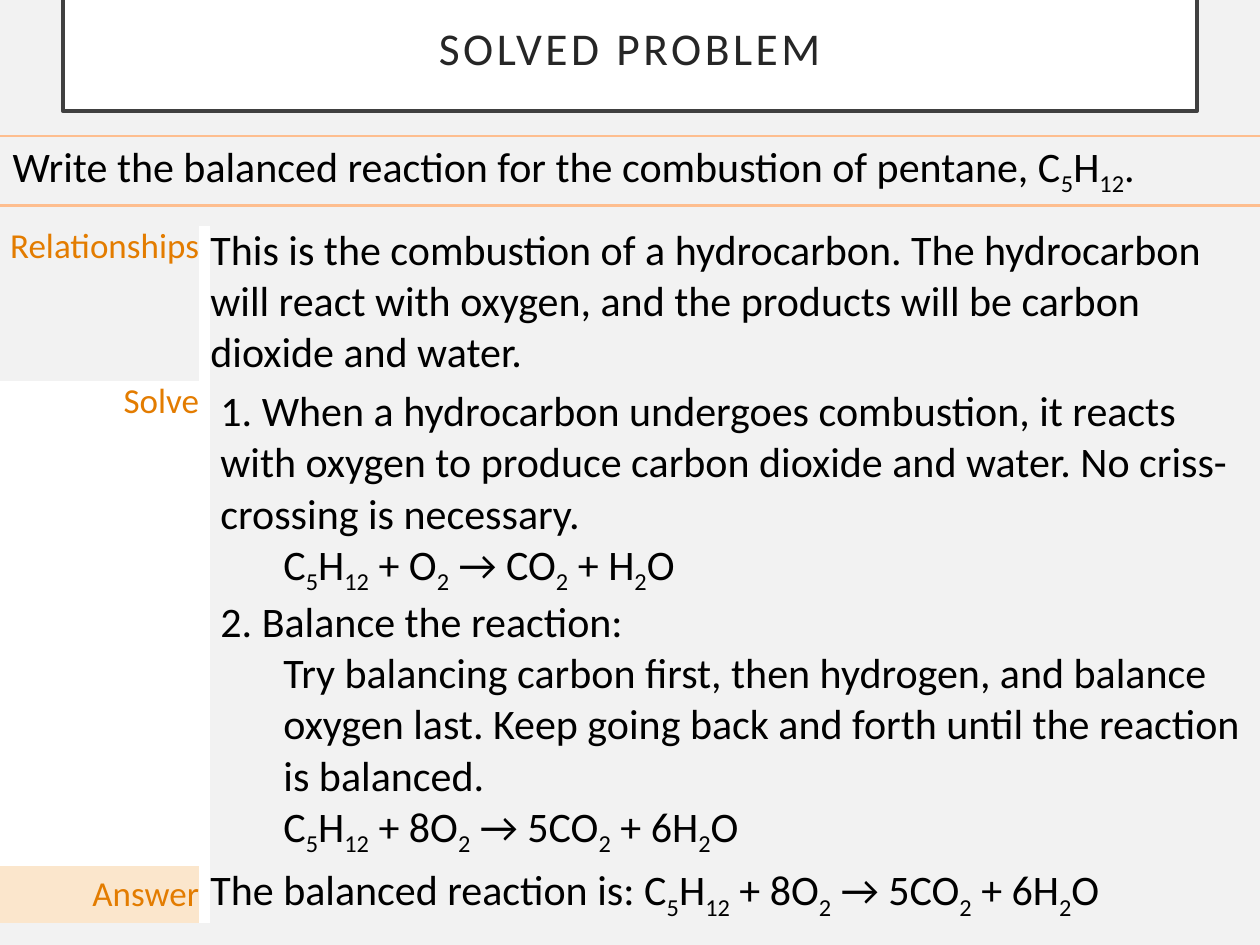
from lxml.etree import SubElement
from pptx import Presentation
from pptx.dml.color import RGBColor
from pptx.enum.shapes import MSO_SHAPE as Shape
from pptx.enum.text import MSO_ANCHOR as Anchor, PP_ALIGN as Align
from pptx.oxml.ns import qn
from pptx.util import Inches, Pt

COLORS = {
    "page": "F2F2F2", "white": "FFFFFF", "frame": "404040", "title": "262626",
    "text": "000000", "label": "E37C00", "rule": "FEBE8F", "answer": "FBE6CC",
}
PENTANE = "C~5~H~12~"
UNBALANCED = f"{PENTANE} + O~2~ → CO~2~ + H~2~O"
BALANCED = f"{PENTANE} + 8O~2~ → 5CO~2~ + 6H~2~O"
NO_STYLE = "{2D5ABB26-0587-4C30-8999-92F81FD0307C}"
FLUSH = (0, 0, 0, 0)


class Sheet:
    """A slide on a grid of 100 columns by 75 rows, with its text style."""

    font = "Calibri"
    body_size, label_size, title_size = 24, 20, 26

    def __init__(self, deck):
        self.unit = deck.slide_width / 100
        self.slide = deck.slides.add_slide(deck.slide_layouts[6])
        self.paint(self.slide.background.fill, "page")

    def span(self, count):
        return round(count * self.unit)

    def paint(self, fill, color):
        fill.solid()
        fill.fore_color.rgb = RGBColor.from_string(COLORS[color])

    def add_text(self, para, text, size, color, align=Align.LEFT, spacing=None):
        para.alignment = align
        for index, part in enumerate(text.split("~")):
            if not part:
                continue
            span = para.add_run()
            span.text = part
            span.font.name = self.font
            span.font.size = Pt(size)
            span.font.color.rgb = RGBColor.from_string(COLORS[color])
            props = span._r.get_or_add_rPr()
            if index % 2:
                props.set("baseline", "-25000")
            if spacing:
                props.set("spc", str(spacing * 100))

    def title(self, text, left, top, width, height):
        box = self.slide.shapes.add_shape(
            Shape.RECTANGLE, *map(self.span, (left, top, width, height)))
        box.shadow.inherit = False
        self.paint(box.fill, "white")
        self.paint(box.line.fill, "frame")
        box.line.width = Pt(2.5)
        frame = box.text_frame
        frame.word_wrap = True
        frame.vertical_anchor = Anchor.MIDDLE
        frame.margin_left = frame.margin_right = self.span(2)
        frame.margin_top = frame.margin_bottom = self.span(2)
        para = frame.paragraphs[0]
        para.line_spacing = 0.9
        self.add_text(para, text, self.title_size, "title", Align.CENTER, 2)

    def table(self, left, top, columns, rows):
        places = map(self.span, (left, top, sum(columns), sum(rows)))
        frame = self.slide.shapes.add_table(len(rows), len(columns), *places)
        table = frame.table
        table.first_row = table.horz_banding = False
        table._tbl.tblPr.find(qn("a:tableStyleId")).text = NO_STYLE
        for column, width in zip(table.columns, columns):
            column.width = self.span(width)
        for row, height in zip(table.rows, rows):
            row.height = self.span(height)
        return table

    def cell(self, cell, lines=(), fill=None, margins=FLUSH, anchor=Anchor.TOP,
             label=False):
        (cell.margin_left, cell.margin_top,
         cell.margin_right, cell.margin_bottom) = map(self.span, margins)
        cell.vertical_anchor = anchor
        if fill:
            self.paint(cell.fill, fill)
        else:
            cell.fill.background()
        frame = cell.text_frame
        for index, (level, text) in enumerate(lines):
            para = frame.add_paragraph() if index else frame.paragraphs[0]
            if level:
                para.level = level
                props = para._p.get_or_add_pPr()
                props.set("marL", str(self.span(5 * level)))
                props.set("indent", "0")
            if label:
                self.add_text(para, text, self.label_size, "label", Align.RIGHT)
            else:
                self.add_text(para, text, self.body_size, "text")

    def rules(self, cell):
        for side in ("a:lnT", "a:lnB"):
            line = SubElement(cell._tc.get_or_add_tcPr(), qn(side), w=str(Pt(1.5)))
            fill = SubElement(line, qn("a:solidFill"))
            SubElement(fill, qn("a:srgbClr"), val=COLORS["rule"])


def main():
    deck = Presentation()
    deck.slide_width, deck.slide_height = Inches(10), Inches(7.5)
    sheet = Sheet(deck)
    sheet.title("SOLVED PROBLEM", 5, -0.8, 90, 9.6)

    question = sheet.table(0, 10.8, [100], [5.5]).cell(0, 0)
    sheet.rules(question)
    sheet.cell(question, [(0, "Write the balanced reaction for the combustion of "
                              f"pentane, {PENTANE}.")],
               margins=(1, 0.5, 1, 0.5), anchor=Anchor.MIDDLE)

    relationships = [(0, "This is the combustion of a hydrocarbon. The hydrocarbon "
                         "will react with oxygen, and the products will be carbon "
                         "dioxide and water.")]
    steps = [
        (0, "1. When a hydrocarbon undergoes combustion, it reacts with oxygen to "
            "produce carbon dioxide and water. No criss-crossing is necessary."),
        (1, UNBALANCED),
        (0, "2. Balance the reaction:"),
        (1, "Try balancing carbon first, then hydrogen, and balance oxygen last. "
            "Keep going back and forth until the reaction is balanced."),
        (1, BALANCED),
    ]
    answer = [(0, f"The balanced reaction is: {BALANCED}")]
    sections = [
        ("Relationships", None, relationships, FLUSH, Anchor.TOP),
        ("Solve", "white", steps, (0.8, 0.5, 1, 0.5), Anchor.TOP),
        ("Answer", "answer", answer, FLUSH, Anchor.MIDDLE),
    ]
    solution = sheet.table(0, 17.9, [15.8, 0.9, 83.3], [12.3, 38.5, 4.5])
    for row, (label, fill, lines, margins, anchor) in enumerate(sections):
        sheet.cell(solution.cell(row, 0), [(0, label)], fill, anchor=anchor, label=True)
        sheet.cell(solution.cell(row, 1), fill="white")
        sheet.cell(solution.cell(row, 2), lines, margins=margins, anchor=anchor)

    deck.save("out.pptx")


if __name__ == "__main__":
    main()
